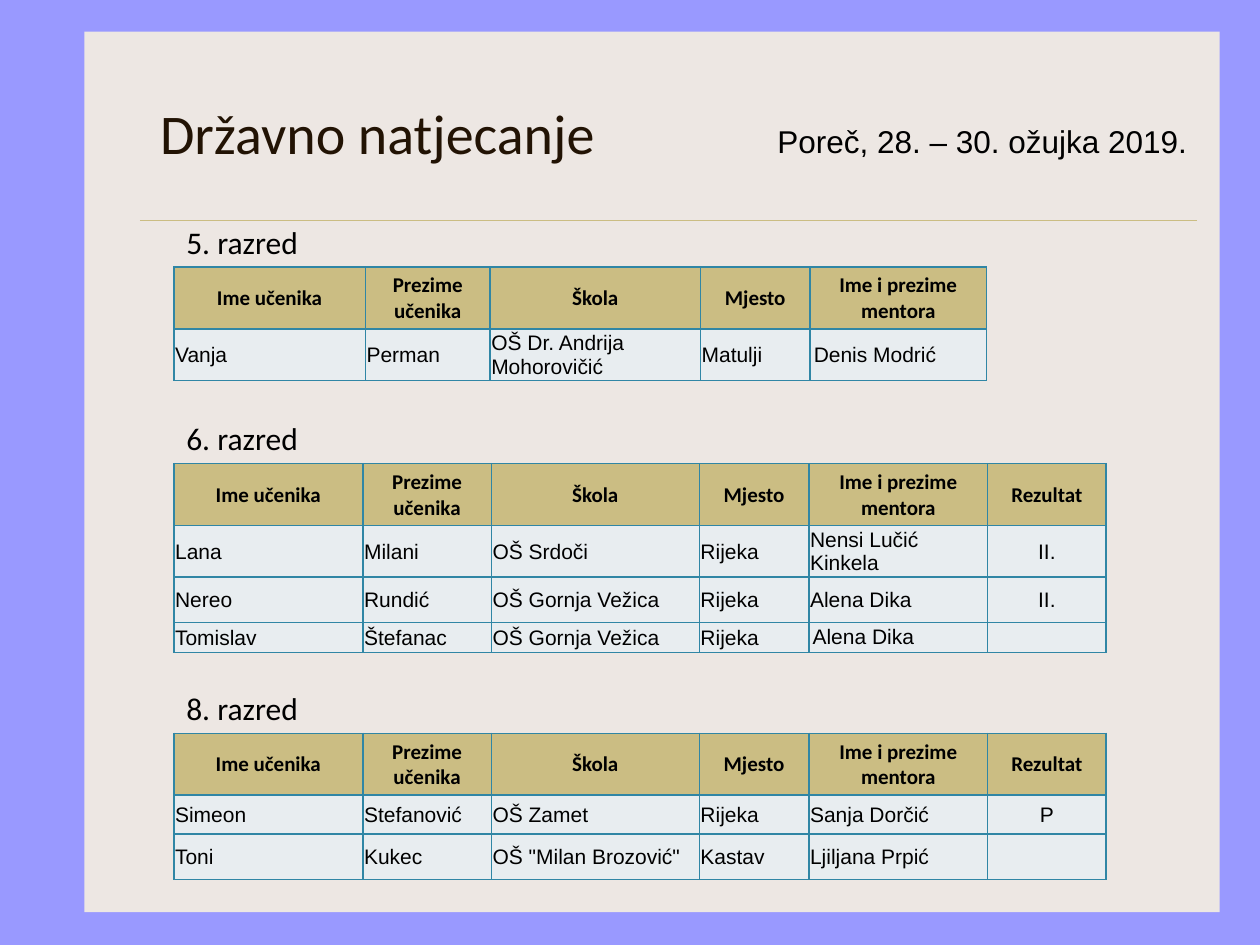
from dataclasses import dataclass

from lxml import etree
from pptx import Presentation
from pptx.dml.color import RGBColor
from pptx.enum.shapes import MSO_CONNECTOR, MSO_SHAPE
from pptx.enum.text import MSO_ANCHOR, MSO_AUTO_SIZE, PP_ALIGN
from pptx.oxml.ns import qn
from pptx.util import Inches, Length, Pt

LEFT, CENTER, RIGHT = PP_ALIGN.LEFT, PP_ALIGN.CENTER, PP_ALIGN.RIGHT
TOP, MIDDLE = MSO_ANCHOR.TOP, MSO_ANCHOR.MIDDLE
RECTANGLE, STRAIGHT = MSO_SHAPE.RECTANGLE, MSO_CONNECTOR.STRAIGHT
FIT_SHAPE, NO_FIT = MSO_AUTO_SIZE.SHAPE_TO_FIT_TEXT, MSO_AUTO_SIZE.NONE

LAVENDER, CREAM, GOLD, PALE = "9999FF", "EDE7E3", "CBBD83", "E8EDF0"
TEAL, BROWN, BLACK = "3086A5", "221304", "000000"

GRID_COLUMNS, GRID_ROWS, GRID_STEP = 100, 75, 0.1
TABLE_LEFT, HEADING_WIDTH, HEADING_HEIGHT = 13.8, 22.8, 4
HEADER_HEIGHT = 4.9
HEADERS = ["Ime učenika", "Prezime učenika", "Škola", "Mjesto", "Ime i prezime mentora", "Rezultat"]
MENTOR, RESULT = 4, 5
NARROW_COLUMNS = [15.2, 9.9, 16.7, 8.7, 14]
WIDE_COLUMNS = [15, 10.2, 16.5, 8.7, 14.2, 9.4]


@dataclass
class Style:
    """Look of a piece of text."""
    size: float
    font: str = "Calibri"
    color: str = BLACK
    bold: bool = False
    align: PP_ALIGN = LEFT


@dataclass
class Grade:
    """One school grade with its table of contestants."""
    name: str
    top: float
    columns: list[float]
    heights: list[float]
    pupils: list[list[str]]
    indent_last_mentor: bool = False


HEADER_STYLE = Style(12, bold=True, align=CENTER)
BODY_STYLE = Style(12, "Arial")
RESULT_STYLE = Style(12, "Arial", align=CENTER)

GRADES = [
    Grade("5. razred", 21.2, NARROW_COLUMNS, [3.1], [
        ["Vanja", "Perman", "OŠ Dr. Andrija Mohorovičić", "Matulji", "Denis Modrić"],
    ], True),
    Grade("6. razred", 36.8, WIDE_COLUMNS, [3.1, 3.6, 2.4], [
        ["Lana", "Milani", "OŠ Srdoči", "Rijeka", "Nensi Lučić Kinkela", "II."],
        ["Nereo", "Rundić", "OŠ Gornja Vežica", "Rijeka", "Alena Dika", "II."],
        ["Tomislav", "Štefanac", "OŠ Gornja Vežica", "Rijeka", "Alena Dika", ""],
    ], True),
    Grade("8. razred", 58.2, WIDE_COLUMNS, [3.1, 3.6], [
        ["Simeon", "Stefanović", "OŠ Zamet", "Rijeka", "Sanja Dorčić", "P"],
        ["Toni", "Kukec", 'OŠ "Milan Brozović"', "Kastav", "Ljiljana Prpić", ""],
    ]),
]


def grid(steps: float) -> Length:
    """Return the length of a number of grid steps."""
    return Inches(steps * GRID_STEP)


def paint(fill, color: str) -> None:
    """Fill with one solid colour."""
    fill.solid()
    fill.fore_color.rgb = RGBColor.from_string(color)


def write(frame, text: str, style: Style) -> None:
    """Write one styled paragraph into a text frame."""
    para = frame.paragraphs[0]
    para.alignment = style.align
    if not text:
        etree.SubElement(para._p, qn("a:endParaRPr"), sz=str(int(style.size * 100)))
        return
    span = para.add_run()
    span.text = text
    span.font.size = Pt(style.size)
    span.font.name = style.font
    span.font.bold = style.bold
    span.font.color.rgb = RGBColor.from_string(style.color)


def add_text(page, place: list[float], text: str, style: Style, anchor: MSO_ANCHOR) -> None:
    """Add a wrapping text box."""
    box = page.shapes.add_textbox(*map(grid, place))
    box.text_frame.word_wrap = True
    box.text_frame.auto_size = FIT_SHAPE
    box.text_frame.vertical_anchor = anchor
    write(box.text_frame, text, style)


def add_borders(cell) -> None:
    """Outline all four sides of a cell."""
    properties = cell._tc.get_or_add_tcPr()
    for index, side in enumerate(("lnL", "lnR", "lnT", "lnB")):
        line = etree.Element(qn(f"a:{side}"), w=str(Pt(1)))
        solid = etree.SubElement(line, qn("a:solidFill"))
        etree.SubElement(solid, qn("a:srgbClr"), val=TEAL)
        properties.insert(index, line)


def fill_cell(cell, text: str, style: Style, color: str, indented: bool) -> None:
    """Format a cell and write its text."""
    cell.margin_left = cell.margin_right = Inches(0.03 if indented else 0.01)
    cell.margin_top = Inches(0 if indented else 0.01)
    cell.margin_bottom = 0
    cell.vertical_anchor = MIDDLE
    paint(cell.fill, color)
    add_borders(cell)
    write(cell.text_frame, text, style)


def add_grade(page, grade: Grade) -> None:
    """Add the heading and the table of one grade."""
    heading = [TABLE_LEFT, grade.top - HEADING_HEIGHT, HEADING_WIDTH, HEADING_HEIGHT]
    add_text(page, heading, grade.name, Style(18), TOP)
    rows = [HEADERS[:len(grade.columns)], *grade.pupils]
    heights = [HEADER_HEIGHT, *grade.heights]
    place = [TABLE_LEFT, grade.top, sum(grade.columns), sum(heights)]
    table = page.shapes.add_table(len(rows), len(grade.columns), *map(grid, place)).table
    table.first_row = table.horz_banding = False
    for column, width in zip(table.columns, grade.columns):
        column.width = grid(width)
    for row, height in zip(table.rows, heights):
        row.height = grid(height)
    for r, row in enumerate(rows):
        for c, text in enumerate(row):
            style = HEADER_STYLE if r == 0 else RESULT_STYLE if c == RESULT else BODY_STYLE
            indented = grade.indent_last_mentor and r == len(rows) - 1 and c == MENTOR
            fill_cell(table.cell(r, c), text, style, PALE if r else GOLD, indented)


def add_backdrop(page) -> None:
    """Add the background, the panel and the rule under the title."""
    paint(page.background.fill, LAVENDER)
    panel = page.shapes.add_shape(RECTANGLE, *map(grid, [6.7, 2.5, 90.1, 69.9]))
    panel.shadow.inherit = False
    paint(panel.fill, CREAM)
    panel.line.fill.background()
    rule = page.shapes.add_connector(STRAIGHT, *map(grid, [11.1, 17.5, 95, 17.5]))
    rule.line.width = Pt(0.25)
    rule.line.color.rgb = RGBColor.from_string(GOLD)
    etree.SubElement(rule._element.spPr, qn("a:effectLst"))


def add_title(page) -> None:
    """Format the title placeholder and bring it in front of the panel."""
    title = page.shapes.title
    title.left, title.top, title.width, title.height = map(grid, [11.7, 4.2, 83.3, 12.5])
    title.text_frame.auto_size = NO_FIT
    title.text_frame.vertical_anchor = MIDDLE
    write(title.text_frame, "Državno natjecanje", Style(32, color=BROWN))
    page.shapes._spTree.append(title._element)


def main() -> None:
    """Build and save the deck."""
    deck = Presentation()
    deck.slide_width, deck.slide_height = grid(GRID_COLUMNS), grid(GRID_ROWS)
    page = deck.slides.add_slide(deck.slide_layouts[5])
    add_backdrop(page)
    add_title(page)
    date_style = Style(18, "Arial", align=RIGHT)
    add_text(page, [57.4, 9.2, 37.8, 4], "Poreč, 28. – 30. ožujka 2019.", date_style, MIDDLE)
    for grade in GRADES:
        add_grade(page, grade)
    deck.save("out.pptx")


if __name__ == "__main__":
    main()
